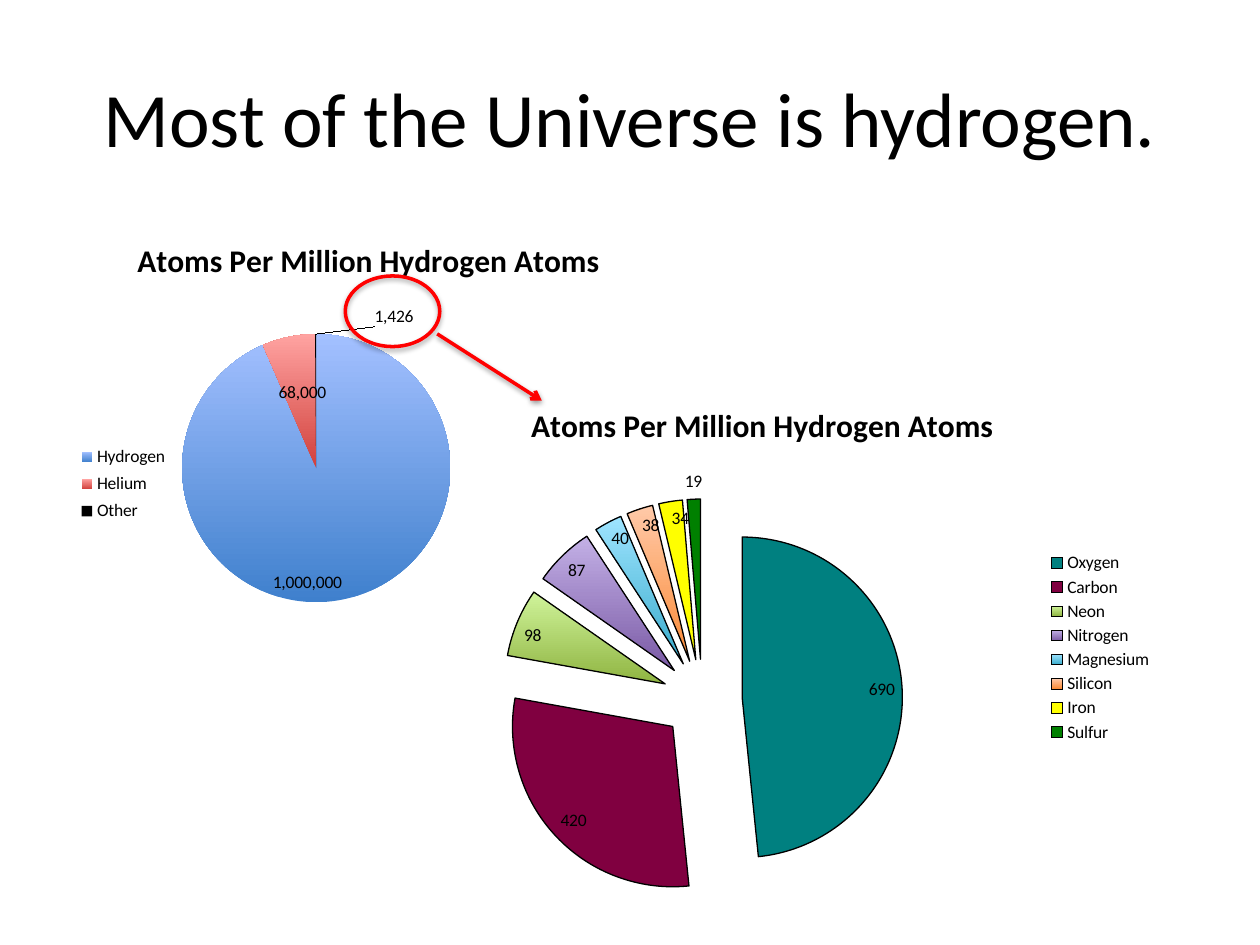
"""Build a slide with two pie charts showing the abundance of elements."""
from lxml import etree
from pptx import Presentation
from pptx.chart.data import CategoryChartData
from pptx.dml.color import RGBColor
from pptx.enum.chart import XL_CHART_TYPE, XL_LABEL_POSITION, XL_LEGEND_POSITION
from pptx.enum.shapes import MSO_CONNECTOR, MSO_SHAPE
from pptx.enum.text import MSO_ANCHOR, PP_ALIGN
from pptx.oxml.ns import qn
from pptx.util import Inches, Pt

PIE = XL_CHART_TYPE.PIE
INSIDE, OUTSIDE, CENTER = (XL_LABEL_POSITION.INSIDE_END, XL_LABEL_POSITION.OUTSIDE_END,
                           XL_LABEL_POSITION.CENTER)
LEGEND_RIGHT = XL_LEGEND_POSITION.RIGHT
OVAL, STRAIGHT = MSO_SHAPE.OVAL, MSO_CONNECTOR.STRAIGHT
MIDDLE, CENTERED = MSO_ANCHOR.MIDDLE, PP_ALIGN.CENTER

WIDTH, HEIGHT = Inches(10), Inches(7.5)
FONT = "Calibri"
COLORS = {
    "black": "000000", "red": "FF0000", "teal": "008080", "wine": "800040",
    "yellow": "FFFF00", "green": "008000",
    "blue light": "A3C0FF", "blue dark": "3F80CD",
    "rose light": "FFA3A1", "rose dark": "D1403C",
    "lime light": "D0F49B", "lime dark": "8FB441",
    "violet light": "C3B0E6", "violet dark": "7A5AA5",
    "sky light": "9EE4FF", "sky dark": "38AACB",
    "orange light": "FFC9A8", "orange dark": "FA8A36",
}

TITLE = "Most of the Universe is hydrogen."
TITLE_BOX = (5, 4, 90, 16.67)
CHART_TITLE = "Atoms Per Million Hydrogen Atoms"
ALL_ATOMS = {
    "box": (3.3, 23.07, 51.9, 42.67),
    "plot": (21.5, 28.8, 41, 66.5),
    "legend": (5.5, 55, 14, 22),
    "slices": [("Hydrogen", 1000000, "blue"), ("Helium", 68000, "rose"),
               ("Other", 1426, "black")],
    "labels": {1: (CENTER, (0, -2.5)), 2: (OUTSIDE, (12, 0))},
    "outline": None,
    "explosion": 0,
}
OTHER_ATOMS = {
    "box": (28.7, 40.27, 63.6, 56.53),
    "plot": (17.5, 22.2, 50, 75),
    "legend": (85.2, 31.5, 14, 37),
    "slices": [("Oxygen", 690, "teal"), ("Carbon", 420, "wine"), ("Neon", 98, "lime"),
               ("Nitrogen", 87, "violet"), ("Magnesium", 40, "sky"),
               ("Silicon", 38, "orange"), ("Iron", 34, "yellow"), ("Sulfur", 19, "green")],
    "labels": {7: (OUTSIDE, None)},
    "outline": 0.75,
    "explosion": 25,
}
CIRCLE_BOX = (27.4, 29.2, 7.5, 7.47)
ARROW_ENDS = (34.7, 35.33, 43, 42.4)
CIRCLE_SHADOW = {"alpha": 35, "blur": 3.1, "distance": 1.8}
ARROW_SHADOW = {"alpha": 38, "blur": 3.1, "distance": 1.6}


def rgb(name):
    return RGBColor.from_string(COLORS[name])


def place(shares):
    return [round(share * side / 100) for share, side in zip(shares, (WIDTH, HEIGHT) * 2)]


def apply_format(target, values):
    for name, value in values.items():
        setattr(target, name, value)


def style_font(font, size, bold=False):
    apply_format(font, {"name": FONT, "size": Pt(size), "bold": bold})
    font.color.rgb = rgb("black")


def manual_layout(shares, is_plot=False):
    layout = etree.Element(qn("c:layout"))
    manual = etree.SubElement(layout, qn("c:manualLayout"))
    values = {"layoutTarget": "inner"} if is_plot else {}
    if len(shares) == 4:
        values.update(xMode="edge", yMode="edge")
    values.update((key, str(round(share / 100, 4))) for key, share in zip("xywh", shares))
    for name, value in values.items():
        etree.SubElement(manual, qn(f"c:{name}"), val=value)
    return layout


def fill_slice(fill, color):
    if color in COLORS:
        fill.solid()
        fill.fore_color.rgb = rgb(color)
        return
    fill.gradient()
    fill.gradient_angle = 90
    for stop, shade in zip(fill.gradient_stops, ("dark", "light")):
        stop.color.rgb = rgb(f"{color} {shade}")


def outline_slice(line, width):
    if width is None:
        line.fill.background()
    else:
        line.color.rgb = rgb("black")
        line.width = Pt(width)


def add_pie(slide, pie):
    names, values, colors = zip(*pie["slices"])
    data = CategoryChartData(number_format="#,##0")
    data.categories = names
    data.add_series("Series 1", values)
    chart = slide.shapes.add_chart(PIE, *place(pie["box"]), data).chart
    style_font(chart.font, 10)
    title = chart.chart_title.text_frame
    title.text = CHART_TITLE
    style_font(title.paragraphs[0].runs[0].font, 18, True)

    chart.has_legend = True
    apply_format(chart.legend, {"position": LEGEND_RIGHT, "include_in_layout": False})
    chart.legend._element.find(qn("c:legendPos")).addnext(manual_layout(pie["legend"]))
    plot = chart.plots[0]
    plot.vary_by_categories = True
    area = plot._element.getparent()
    for layout in area.findall(qn("c:layout")):
        area.remove(layout)
    area.insert(0, manual_layout(pie["plot"], True))

    series = plot.series[0]
    outline_slice(series.format.line, pie["outline"])
    explosion = etree.Element(qn("c:explosion"), val=str(pie["explosion"]))
    series._element.find(qn("c:spPr")).addnext(explosion)
    for index, color in enumerate(colors):
        point_format = series.points[index].format
        fill_slice(point_format.fill, color)
        outline_slice(point_format.line, pie["outline"])
    apply_format(series.data_labels, {
        "show_value": True, "number_format": "#,##0",
        "number_format_is_linked": False, "position": INSIDE})
    for index, (position, offset) in pie["labels"].items():
        label = series.points[index].data_label
        label.position = position
        if offset:
            element = series.data_labels._element.findall(qn("c:dLbl"))[-1]
            element.find(qn("c:idx")).addnext(manual_layout(offset))


def draw_red(shape, shadow):
    shape.line.color.rgb = rgb("red")
    shape.line.width = Pt(2)
    properties = shape._element.spPr
    effects = properties.find(qn("a:effectLst"))
    if effects is None:
        effects = etree.SubElement(properties, qn("a:effectLst"))
    outer = etree.SubElement(
        effects, qn("a:outerShdw"), blurRad=str(Pt(shadow["blur"])),
        dist=str(Pt(shadow["distance"])), dir="5400000", rotWithShape="0")
    color = etree.SubElement(outer, qn("a:srgbClr"), val=COLORS["black"])
    etree.SubElement(color, qn("a:alpha"), val=str(shadow["alpha"] * 1000))


def add_title(slide):
    frame = slide.shapes.add_textbox(*place(TITLE_BOX)).text_frame
    apply_format(frame, {"word_wrap": True, "vertical_anchor": MIDDLE})
    paragraph = frame.paragraphs[0]
    apply_format(paragraph, {"text": TITLE, "alignment": CENTERED})
    style_font(paragraph.runs[0].font, 44)


def main():
    presentation = Presentation()
    apply_format(presentation, {"slide_width": WIDTH, "slide_height": HEIGHT})
    slide = presentation.slides.add_slide(presentation.slide_layouts[6])
    add_pie(slide, ALL_ATOMS)
    add_title(slide)
    circle = slide.shapes.add_shape(OVAL, *place(CIRCLE_BOX))
    circle.fill.background()
    circle.shadow.inherit = False
    draw_red(circle, CIRCLE_SHADOW)
    add_pie(slide, OTHER_ATOMS)
    arrow = slide.shapes.add_connector(STRAIGHT, *place(ARROW_ENDS))
    draw_red(arrow, ARROW_SHADOW)
    etree.SubElement(arrow.line._get_or_add_ln(), qn("a:tailEnd"), type="arrow")
    presentation.save("out.pptx")


if __name__ == "__main__":
    main()
